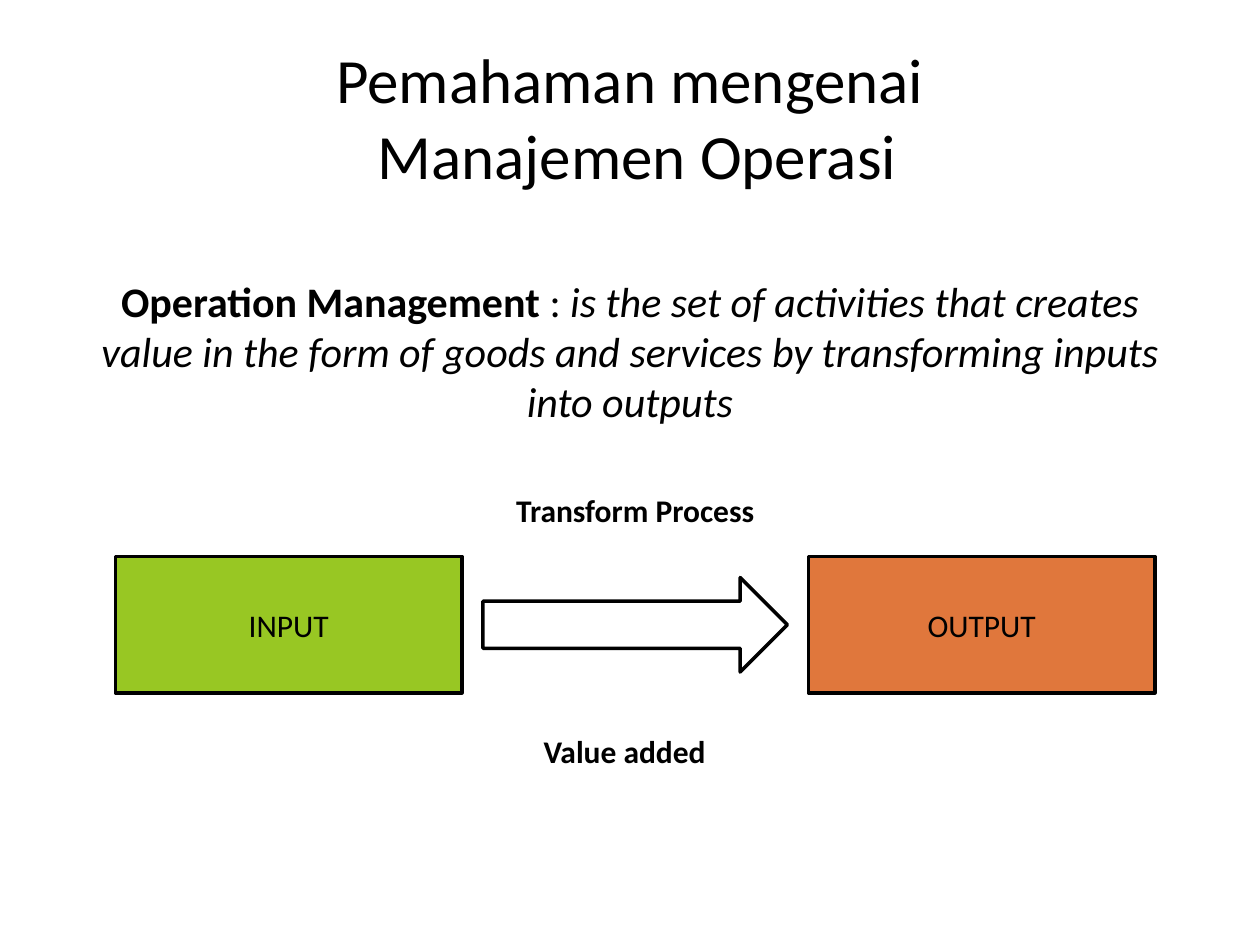
from dataclasses import dataclass

from lxml.etree import SubElement
from pptx import Presentation
from pptx.dml.color import RGBColor
from pptx.enum.shapes import MSO_SHAPE as Preset
from pptx.enum.text import MSO_ANCHOR as Anchor, MSO_AUTO_SIZE as AutoSize, PP_ALIGN as Align
from pptx.oxml.ns import qn
from pptx.util import Emu, Pt

EMU_PER_PX = 7620


@dataclass(frozen=True)
class Theme:
    """Hold the colours, font and type sizes of the slide."""
    font: str = "Calibri"
    ink: str = "000000"
    paper: str = "FFFFFF"
    input_fill: str = "98C723"
    output_fill: str = "E0773C"
    title_size: int = 36
    body_size: int = 24
    label_size: int = 18
    line_width: int = 2


THEME = Theme()


def px(*lengths):
    """Turn px lengths into EMU."""
    return [Emu(length * EMU_PER_PX) for length in lengths]


def style_font(font, size, bold=False, italic=False):
    """Apply the theme font in the given size and style."""
    font.name, font.size = THEME.font, Pt(size)
    font.bold, font.italic = bold, italic
    font.color.rgb = RGBColor.from_string(THEME.ink)


def style_text(text_frame, size, bold=False):
    """Centre the text of a frame and format its runs."""
    text_frame.word_wrap = True
    for paragraph in text_frame.paragraphs:
        paragraph.alignment = Align.CENTER
        for run in paragraph.runs:
            style_font(run.font, size, bold)


def place(shape, box):
    """Move a placeholder to a box given in px."""
    shape.left, shape.top, shape.width, shape.height = px(*box)


def add_title(slide, box, text):
    """Fill the title placeholder."""
    title = slide.shapes.title
    place(title, box)
    text_frame = title.text_frame
    text_frame.text = text
    text_frame.vertical_anchor = Anchor.MIDDLE
    text_frame.auto_size = AutoSize.NONE
    style_text(text_frame, THEME.title_size)


def add_definition(slide, box, term, separator, meaning):
    """Fill the body placeholder with a term and its meaning."""
    body = slide.placeholders[1]
    place(body, box)
    text_frame = body.text_frame
    text_frame.word_wrap = True
    text_frame.auto_size = AutoSize.NONE
    paragraph = text_frame.paragraphs[0]
    paragraph.alignment = Align.CENTER
    paragraph.space_before = Pt(0)
    properties = paragraph._p.get_or_add_pPr()
    properties.set("marL", "0")
    properties.set("indent", "0")
    SubElement(properties, qn("a:buNone"))
    for text, bold, italic in ((term, True, False), (separator, False, False), (meaning, False, True)):
        run = paragraph.add_run()
        run.text = text
        style_font(run.font, THEME.body_size, bold, italic)


def add_block(shapes, preset, box, fill, text=""):
    """Add an outlined shape with an optional centred label."""
    shape = shapes.add_shape(preset, *px(*box))
    shape.shadow.inherit = False
    shape.fill.solid()
    shape.fill.fore_color.rgb = RGBColor.from_string(fill)
    shape.line.color.rgb = RGBColor.from_string(THEME.ink)
    shape.line.width = Pt(THEME.line_width)
    if text:
        shape.text_frame.text = text
        shape.text_frame.vertical_anchor = Anchor.MIDDLE
        style_text(shape.text_frame, THEME.label_size)


def add_caption(shapes, box, text):
    """Add a bold centred caption."""
    text_frame = shapes.add_textbox(*px(*box)).text_frame
    text_frame.text = text
    text_frame.auto_size = AutoSize.SHAPE_TO_FIT_TEXT
    style_text(text_frame, THEME.label_size, bold=True)


def add_process(slide, box):
    """Draw the input, arrow and output with captions above and below."""
    left, top, width, height = box
    shapes = slide.shapes.add_group_shape().shapes
    block_width, block_height, gap, arrow_height = 330, 130, 20, 90
    block_top = top + 68
    output_left = left + width - block_width
    add_block(shapes, Preset.RECTANGLE, (left, block_top, block_width, block_height),
              THEME.input_fill, "INPUT")
    add_block(shapes, Preset.RECTANGLE, (output_left, block_top, block_width, block_height),
              THEME.output_fill, "OUTPUT")
    arrow_left = left + block_width + gap
    arrow_top = block_top + (block_height - arrow_height) // 2
    add_block(shapes, Preset.RIGHT_ARROW,
              (arrow_left, arrow_top, output_left - gap - arrow_left, arrow_height), THEME.paper)
    caption_width, caption_height = 350, 48
    add_caption(shapes, (left + 320, top, caption_width, caption_height), "Transform Process")
    add_caption(shapes, (left + 310, top + height - caption_height, caption_width, caption_height),
                "Value added")


def main():
    """Build and save the presentation."""
    presentation = Presentation()
    presentation.slide_width, presentation.slide_height = px(1200, 900)
    slide = presentation.slides.add_slide(presentation.slide_layouts[1])
    add_title(slide, (60, 36, 1080, 150), "Pemahaman mengenai\v Manajemen Operasi")
    add_definition(slide, (60, 256, 1080, 184), "Operation Management", " : ",
                   "is the set of activities that creates value in the form of goods "
                   "and services by transforming inputs into outputs")
    add_process(slide, (110, 462, 990, 277))
    presentation.save("out.pptx")


if __name__ == "__main__":
    main()
